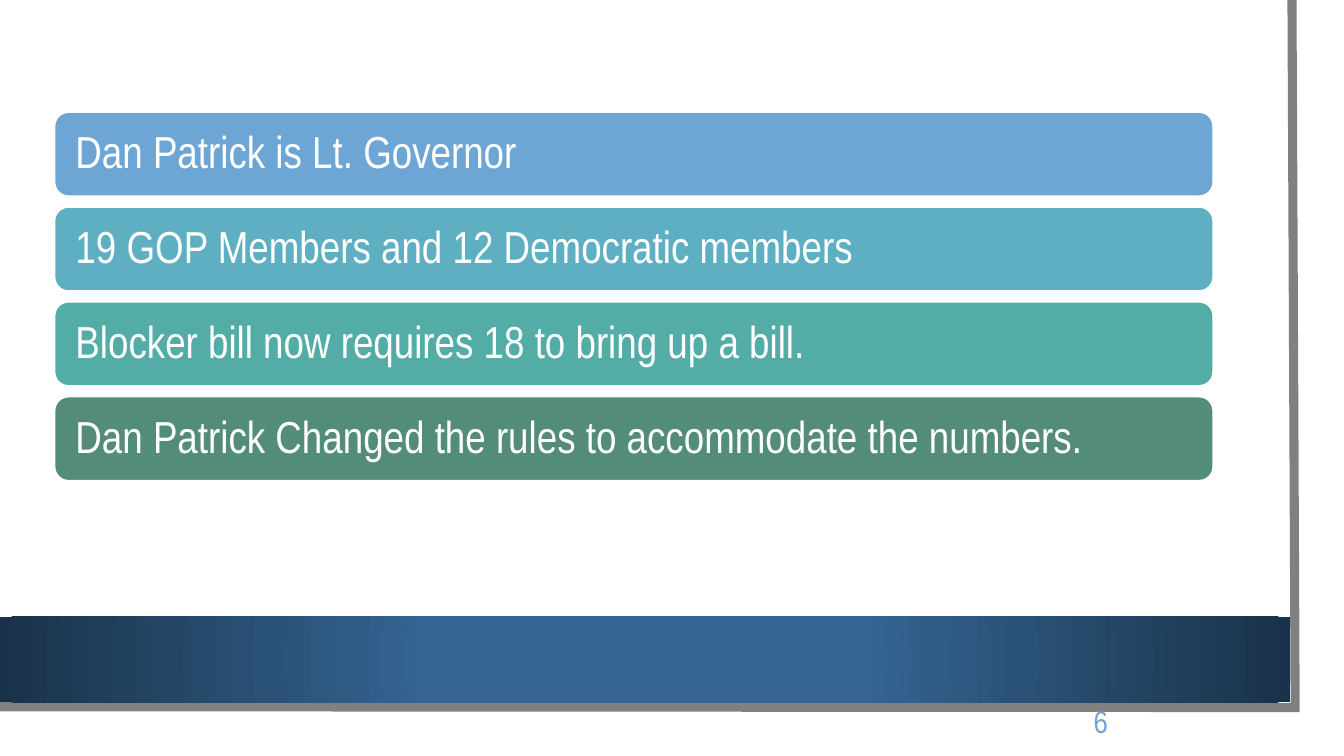
from lxml import etree
from pptx import Presentation
from pptx.dml.color import RGBColor
from pptx.enum.shapes import MSO_SHAPE
from pptx.enum.text import MSO_ANCHOR, PP_ALIGN
from pptx.oxml.ns import qn
from pptx.util import Cm, Pt

RECTANGLE = MSO_SHAPE.RECTANGLE
ROUNDED = MSO_SHAPE.ROUNDED_RECTANGLE
MIDDLE = MSO_ANCHOR.MIDDLE
LEFT, CENTER = PP_ALIGN.LEFT, PP_ALIGN.CENTER

BAR_TOP, BAR_PITCH = 2.82, 2.39
BARS = [
    ("Dan Patrick is Lt. Governor", "6DA5D4"),
    ("19 GOP Members and 12 Democratic members", "5EAFC2"),
    ("Blocker bill now requires 18 to bring up a bill.", "53ADA6"),
    ("Dan Patrick Changed the rules to accommodate the numbers.", "538C79"),
]


def color(value):
    return RGBColor.from_string(value)


class SlideBuilder:
    font = "Arial Narrow"
    white = "FFFFFF"

    def __init__(self, slide):
        self.slide = slide

    def add_text(self, frame, text, size, text_color, alignment):
        frame.word_wrap = True
        frame.vertical_anchor = MIDDLE
        paragraph = frame.paragraphs[0]
        paragraph.alignment = alignment
        run = paragraph.add_run()
        run.text = text
        run.font.name = self.font
        run.font.size = Pt(size)
        run.font.color.rgb = color(text_color)
        return paragraph

    def box(self, preset, left, top, width, height, fill):
        shape = self.slide.shapes.add_shape(
            preset, Cm(left), Cm(top), Cm(width), Cm(height))
        shape.shadow.inherit = False
        shape.fill.solid()
        shape.fill.fore_color.rgb = color(fill)
        shape.line.fill.background()
        return shape

    def glow_band(self, left, top, width, height, inner, outer):
        """Draw a rectangle whose colour darkens outward from its centre."""
        shape = self.box(RECTANGLE, left, top, width, height, inner)
        shape.fill.gradient()
        stops = shape.fill.gradient_stops
        for stop, position, value in zip(stops, (0.34, 1), (inner, outer)):
            stop.position = position
            stop.color.rgb = color(value)
        gradient = shape._element.spPr.find(qn("a:gradFill"))
        gradient.remove(gradient.find(qn("a:lin")))
        circle = etree.SubElement(gradient, qn("a:path"), {"path": "circle"})
        etree.SubElement(circle, qn("a:fillToRect"),
                         l="50000", t="50000", r="50000", b="50000")

    def outline(self, points, line_color, weight):
        start, *others = [(Cm(x), Cm(y)) for x, y in points]
        builder = self.slide.shapes.build_freeform(*start)
        builder.add_line_segments(others, close=False)
        shape = builder.convert_to_shape()
        shape.shadow.inherit = False
        shape.fill.background()
        shape.line.color.rgb = color(line_color)
        shape.line.width = Pt(weight)
        line = shape._element.spPr.find(qn("a:ln"))
        etree.SubElement(line, qn("a:miter"), lim="800000")

    def bar(self, top, text, fill):
        shape = self.box(ROUNDED, 1.37, top, 29.21, 2.13, fill)
        shape.line.color.rgb = color(self.white)
        shape.line.width = Pt(1.5)
        frame = shape.text_frame
        frame.margin_left = frame.margin_right = Cm(0.43)
        frame.margin_top = frame.margin_bottom = Cm(0.43)
        self.add_text(frame, text, 32, self.white, LEFT).line_spacing = 0.9

    def page_number(self, text):
        box = self.slide.shapes.add_textbox(Cm(23.93), Cm(17.65), Cm(7.62), Cm(1.02))
        paragraph = self.add_text(box.text_frame, text, 22.4, "75A2CE", CENTER)
        paragraph.space_after = Pt(6)


def main():
    presentation = Presentation()
    presentation.slide_width = Cm(33.87)
    presentation.slide_height = Cm(19.05)
    builder = SlideBuilder(
        presentation.slides.add_slide(presentation.slide_layouts[6]))

    builder.box(RECTANGLE, 0, 0, 33.27, 18.47, builder.white)
    builder.outline([(32.56, 0), (32.64, 17.83), (-0.08, 17.81)], "808080", 6.5)
    builder.glow_band(0, 15.54, 32.51, 2.16, "346492", "1A3249")
    builder.page_number("6")
    for index, (text, fill) in enumerate(BARS):
        builder.bar(BAR_TOP + index * BAR_PITCH, text, fill)

    presentation.save("out.pptx")


if __name__ == "__main__":
    main()
